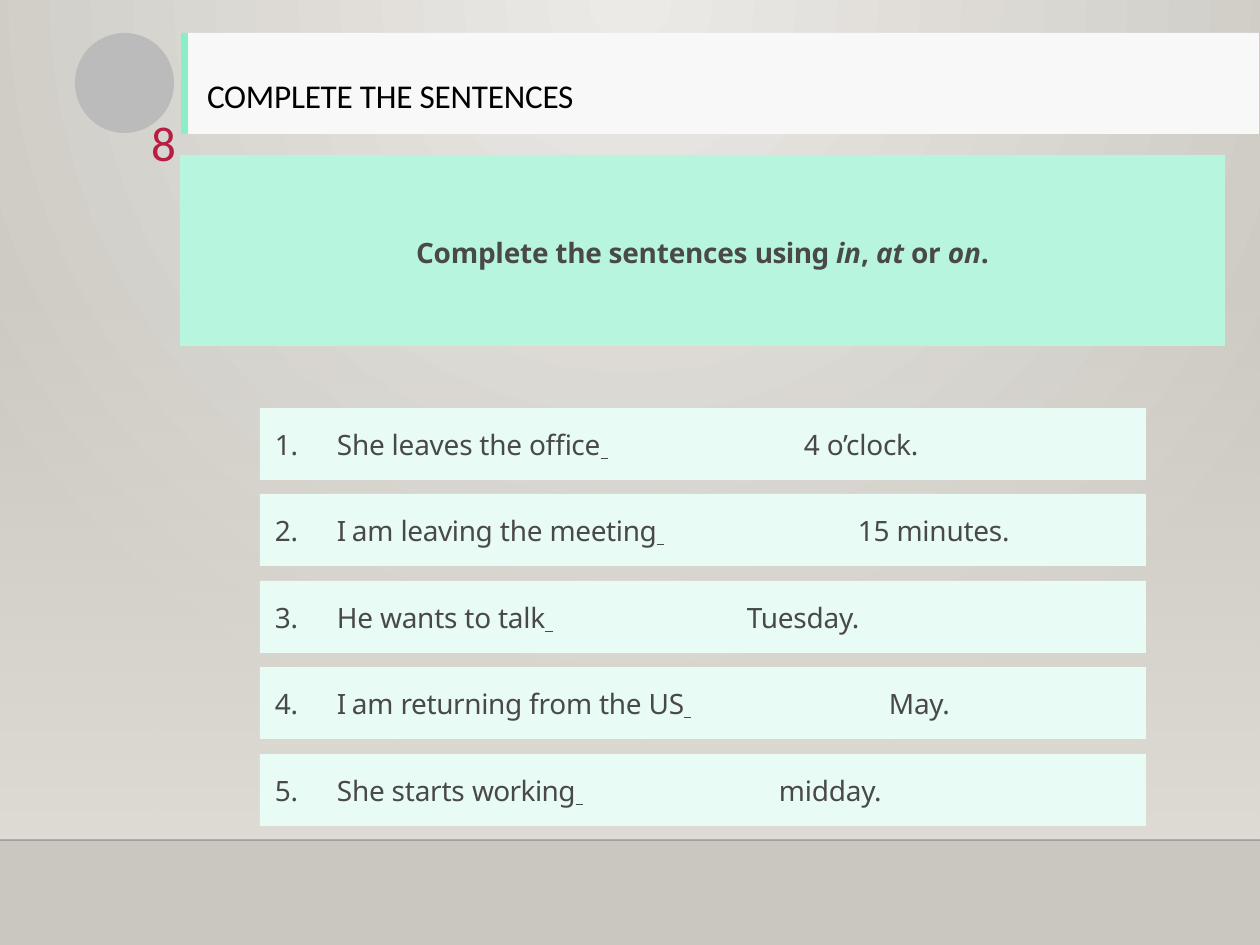
"""Build the grammar exercise slide on prepositions of time."""
from typing import NamedTuple

from pptx import Presentation
from pptx.dml.color import RGBColor
from pptx.enum.shapes import MSO_CONNECTOR as CONNECTOR, MSO_SHAPE as SHAPE
from pptx.enum.text import MSO_ANCHOR as ANCHOR, PP_ALIGN as ALIGN
from pptx.oxml import parse_xml
from pptx.oxml.ns import nsdecls, qn
from pptx.util import Pt

INK = "494949"
ROW_FILL = "E8FBF4"
ROW_LEFT, ROW_TOP, ROW_WIDTH, ROW_HEIGHT = 260, 408, 886, 72
ROW_INSET, NUMBER_TAB = 15, 62


class Span(NamedTuple):
    text: str
    spacing: float = -0.1
    italic: bool = False
    underline: bool = False


class Style(NamedTuple):
    font: str = "Noto Sans"
    size: int = 16
    color: str = INK
    bold: bool = False


class Sentence(NamedTuple):
    start: list[Span]
    ending: Span
    answer_tab: int


SENTENCES = [
    Sentence([Span("She leaves the office")], Span("4 o’clock."), 529),
    Sentence([Span("I ", -1), Span("am "), Span("leaving ", -0.2), Span("the "),
              Span("meeting", -0.2)], Span("15 minutes."), 583),
    Sentence([Span("He wants to talk")], Span("Tuesday."), 472),
    Sentence([Span("I ", -1), Span("am "), Span("returning ", -0.2),
              Span("from the US")], Span("May."), 614),
    Sentence([Span("She starts "), Span("working", -0.3)], Span("midday."), 504),
]
INSTRUCTION = [
    Span("Complete the sentences "), Span("using ", -0.3), Span("in", italic=True),
    Span(", "), Span("at ", italic=True), Span("or "), Span("on", italic=True), Span("."),
]


def px(length: int) -> int:
    return round(length * 914400 / 126)


def rgb(color: str) -> RGBColor:
    return RGBColor.from_string(color)


def gradient(stops: list[tuple[int, str, int]], direction: str):
    """Make a gradient fill from (position, colour, opacity) stops."""
    marks = "".join(
        f'<a:gs pos="{place * 1000}"><a:srgbClr val="{color}">'
        f'<a:alpha val="{opacity * 1000}"/></a:srgbClr></a:gs>'
        for place, color, opacity in stops)
    return parse_xml(f'<a:gradFill {nsdecls("a")} rotWithShape="1">'
                     f'<a:gsLst>{marks}</a:gsLst>{direction}</a:gradFill>')


def paint_background(slide) -> None:
    slide.background.fill.solid()
    solid = slide.background._cSld.find(f".//{qn('a:solidFill')}")
    glow = ('<a:path path="circle"><a:fillToRect l="43000" t="0" r="43000" '
            'b="100000"/></a:path>')
    solid.getparent().replace(
        solid, gradient([(0, "ECEAE7", 100), (100, "CAC7C1", 100)], glow))


def add_block(slide, kind, left: int, top: int, width: int, height: int, color: str):
    block = slide.shapes.add_shape(kind, px(left), px(top), px(width), px(height))
    block.shadow.inherit = False
    block.fill.solid()
    block.fill.fore_color.rgb = rgb(color)
    block.line.fill.background()
    return block


def add_floor(slide) -> None:
    wall = add_block(slide, SHAPE.RECTANGLE, 0, 277, 1260, 563, "DFDBD5")
    solid = wall._element.spPr.find(qn("a:solidFill"))
    wall._element.spPr.replace(
        solid, gradient([(0, "DFDBD5", 0), (100, "DFDBD5", 100)],
                        '<a:lin ang="5400000" scaled="0"/>'))
    edge = slide.shapes.add_connector(CONNECTOR.STRAIGHT, 0, px(840), px(1260), px(840))
    edge.line.width = Pt(1)
    edge.line.color.rgb = rgb("000001")
    tint = edge._element.spPr.find(f".//{qn('a:srgbClr')}")
    tint.append(parse_xml(f'<a:alpha {nsdecls("a")} val="20000"/>'))
    edge._element.spPr.append(parse_xml(f'<a:effectLst {nsdecls("a")}/>'))


def write(shape, spans: list[Span], style: Style, align=ALIGN.LEFT,
          anchor=ANCHOR.MIDDLE, left_inset: int = 0, top_inset: int = 0,
          tabs: tuple[int, ...] = ()) -> None:
    frame = shape.text_frame
    frame.word_wrap = True
    frame.vertical_anchor = anchor
    frame.margin_left, frame.margin_top = px(left_inset), px(top_inset)
    frame.margin_right = frame.margin_bottom = 0
    para = frame.paragraphs[0]
    para.alignment = align
    if tabs:
        stops = "".join(f'<a:tab pos="{px(tab)}" algn="l"/>' for tab in tabs)
        para._p.get_or_add_pPr().append(
            parse_xml(f'<a:tabLst {nsdecls("a")}>{stops}</a:tabLst>'))
    for span in spans:
        run = para.add_run()
        run.text = span.text
        font = run.font
        font.name, font.size, font.bold = style.font, Pt(style.size), style.bold
        font.italic, font.underline = span.italic, span.underline
        font.color.rgb = rgb(style.color)
        run._r.get_or_add_rPr().set("spc", str(round(span.spacing * 100)))


def add_label(slide, left: int, top: int, width: int, height: int,
              span: Span, style: Style, align, top_inset: int) -> None:
    box = slide.shapes.add_textbox(px(left), px(top), px(width), px(height))
    write(box, [span], style, align, ANCHOR.TOP, top_inset=top_inset)


def add_header(slide) -> None:
    add_block(slide, SHAPE.RECTANGLE, 187, 33, 1072, 101, "F8F8F8")
    add_block(slide, SHAPE.RECTANGLE, 181, 33, 7, 101, "8AEEC8")
    add_block(slide, SHAPE.OVAL, 75, 33, 99, 100, "BBBBBB")
    add_label(slide, 207, 74, 449, 42, Span("COMPLETE THE SENTENCES"),
              Style("Calibri", 19, "000000"), ALIGN.LEFT, 1)
    add_label(slide, 67, 110, 109, 69, Span("8", 0),
              Style("Calibri", 28, "B71E42"), ALIGN.RIGHT, 3)


def add_sentence(slide, index: int, sentence: Sentence) -> None:
    top = ROW_TOP + index * 173 // 2
    row = add_block(slide, SHAPE.RECTANGLE, ROW_LEFT, top, ROW_WIDTH, ROW_HEIGHT, ROW_FILL)
    spans = [Span(f"{index + 1}.\t"), *sentence.start,
             Span(" \t", underline=True), sentence.ending]
    write(row, spans, Style(), left_inset=ROW_INSET,
          tabs=(NUMBER_TAB, sentence.answer_tab))


def main() -> None:
    deck = Presentation()
    deck.slide_width, deck.slide_height = px(1260), px(945)
    slide = deck.slides.add_slide(deck.slide_layouts[6])
    paint_background(slide)
    add_floor(slide)
    add_header(slide)
    banner = add_block(slide, SHAPE.RECTANGLE, 180, 155, 1045, 191, "B8F5DF")
    write(banner, INSTRUCTION, Style(bold=True), ALIGN.CENTER, top_inset=3)
    for index, sentence in enumerate(SENTENCES):
        add_sentence(slide, index, sentence)
    deck.save("out.pptx")


if __name__ == "__main__":
    main()
